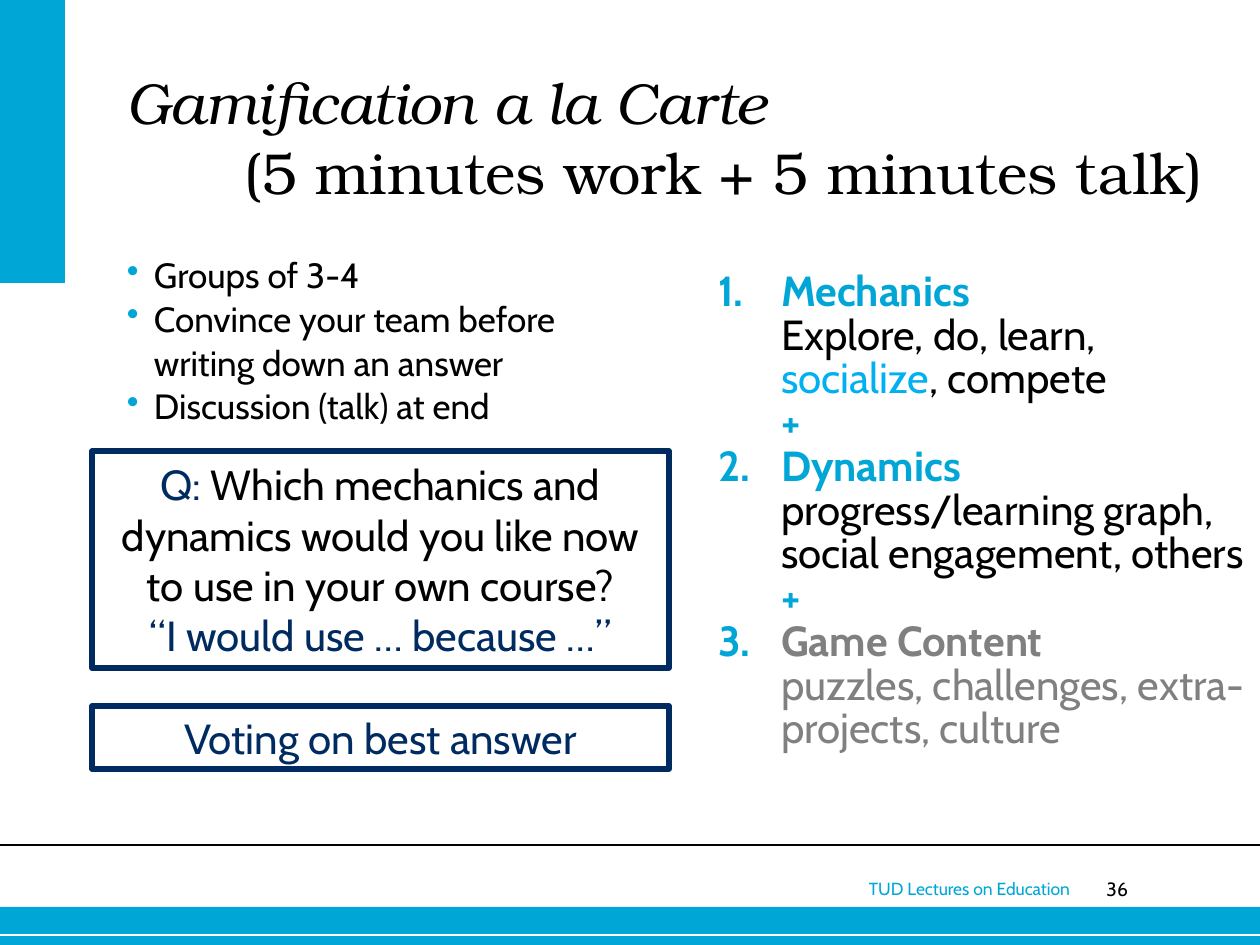
from dataclasses import dataclass

from lxml.etree import SubElement
from pptx import Presentation
from pptx.dml.color import RGBColor
from pptx.enum.shapes import MSO_CONNECTOR, MSO_SHAPE
from pptx.enum.text import MSO_ANCHOR as Anchor, PP_ALIGN as Align
from pptx.oxml.ns import qn
from pptx.util import Emu, Pt


@dataclass(frozen=True)
class Theme:
    cyan: str = "00A6D6"
    sky: str = "00B0F0"
    navy: str = "002B60"
    gray: str = "808080"
    black: str = "000000"
    white: str = "FFFFFF"
    heading: str = "TeX Gyre Bonum"
    body: str = "Cabin"
    title_size: float = 33
    large: float = 24
    medium: float = 20
    number_size: float = 11
    footer_size: float = 10
    leading: float = 25


T = Theme()
PX_PER_INCH = 126
WIDTH, HEIGHT = 1260, 945


def px(n):
    return Emu(round(n * 914400 / PX_PER_INCH))


def rgb(color):
    return RGBColor.from_string(color)


def add_text(p, text, size=T.large, color=T.black, font=T.body, bold=False, italic=False):
    """Append one run; a newline in the text becomes a line break."""
    for i, line in enumerate(text.split("\n")):
        if i:
            p.add_line_break()
        if line:
            r = p.add_run()
            r.text = line
            f = r.font
            f.name, f.size, f.bold, f.italic = font, Pt(size), bold, italic
            f.color.rgb = rgb(color)


def set_indent(p, hang):
    pPr = p._p.get_or_add_pPr()
    pPr.set("marL", str(px(hang)))
    pPr.set("indent", str(-px(hang)))
    return pPr


def add_list_item(tf, index, hang, tag, **marker):
    p = tf.add_paragraph() if index else tf.paragraphs[0]
    pPr = set_indent(p, hang)
    clr = SubElement(pPr, qn("a:buClr"))
    SubElement(clr, qn("a:srgbClr"), val=T.cyan)
    SubElement(pPr, qn(tag), **marker)
    p.line_spacing = Pt(T.leading)
    return p


def set_frame(tf, inset=(0, 0), anchor=Anchor.TOP):
    tf.word_wrap = True
    tf.margin_left = tf.margin_right = px(inset[0])
    tf.margin_top = tf.margin_bottom = px(inset[1])
    tf.vertical_anchor = anchor
    return tf


def text_box(s, x, y, w, h, inset=(0, 0)):
    return set_frame(s.shapes.add_textbox(px(x), px(y), px(w), px(h)).text_frame, inset)


def add_rect(s, x, y, w, h, fill, line=None):
    sp = s.shapes.add_shape(MSO_SHAPE.RECTANGLE, px(x), px(y), px(w), px(h))
    sp.shadow.inherit = False
    sp.fill.solid()
    sp.fill.fore_color.rgb = rgb(fill)
    if line:
        sp.line.color.rgb = rgb(line)
        sp.line.width = Pt(3)
    else:
        sp.line.fill.background()
    return sp


def add_rule(s, y, color, width):
    c = s.shapes.add_connector(MSO_CONNECTOR.STRAIGHT, 0, px(y), px(WIDTH), px(y))
    c.line.color.rgb = rgb(color)
    c.line.width = Pt(width)
    SubElement(c._element.spPr, qn("a:effectLst"))


def add_frame(s):
    add_rect(s, 0, 907, WIDTH, 38, T.cyan)
    add_rule(s, 935, T.white, 0.75)
    add_rule(s, 845, T.black, 1)
    add_rect(s, 0, 0, 65, 283, T.cyan)


def add_footer(s, x, y, footer, number):
    p = text_box(s, x, y, 263, 34, inset=(13, 6)).paragraphs[0]
    add_text(p, footer, size=T.footer_size, color=T.cyan)
    p = text_box(s, x + 210, y + 5, 62, 35).paragraphs[0]
    p.alignment = Align.RIGHT
    add_text(p, number, size=T.number_size)


def add_title(s, x, y, w, h):
    sp = s.shapes.title
    sp.left, sp.top, sp.width, sp.height = px(x), px(y), px(w), px(h)
    p = set_frame(sp.text_frame, anchor=Anchor.MIDDLE).paragraphs[0]
    p.alignment = Align.LEFT
    set_indent(p, 118)
    style = dict(size=T.title_size, font=T.heading)
    add_text(p, "Gamification a la Carte\n", italic=True, **style)
    add_text(p, "(5 minutes work + 5 minutes talk)", **style)


def add_instructions(s, x, y, w, h, items):
    tf = text_box(s, x, y, w, h)
    for i, item in enumerate(items):
        add_text(add_list_item(tf, i, 27, "a:buChar", char="•"), item, size=T.medium)


def add_callout(s, x, y, w, h, parts):
    sp = add_rect(s, x, y, w, h, T.white, T.navy)
    p = set_frame(sp.text_frame, inset=(13, 6), anchor=Anchor.MIDDLE).paragraphs[0]
    p.alignment = Align.CENTER
    for text, color in parts:
        add_text(p, text, color=color)


def add_menu(s, x, y, w, h, courses):
    """Numbered courses: a bold name, then coloured detail, joined by plus signs."""
    tf = text_box(s, x, y, w, h)
    for i, (name, color, details) in enumerate(courses):
        p = add_list_item(tf, i, 63, "a:buAutoNum", type="arabicPeriod")
        add_text(p, name + "\n", color=color, bold=True)
        for text, detail_color in details:
            add_text(p, text, color=detail_color)
        if i < len(courses) - 1:
            add_text(p, "\n+", color=T.cyan, bold=True)


def main():
    prs = Presentation()
    prs.slide_width, prs.slide_height = px(WIDTH), px(HEIGHT)
    s = prs.slides.add_slide(prs.slide_layouts[5])
    add_frame(s)
    add_footer(s, 856, 872, "TUD Lectures on Education", "36")
    add_title(s, 126, 63, 1134, 147)
    add_instructions(s, 127, 252, 530, 190, [
        "Groups of 3-4",
        "Convince your team before writing down an answer",
        "Discussion (talk) at end",
    ])
    add_callout(s, 92, 451, 577, 217, [
        ("Q: ", T.navy),
        ("Which mechanics and dynamics would you like now to use in your own course?\n", T.black),
        ("“I would use … because …”", T.navy),
    ])
    add_menu(s, 718, 271, 538, 621, [
        ("Mechanics", T.cyan, [("Explore, do, learn,\n", T.black), ("socialize", T.sky),
                              (", compete", T.black)]),
        ("Dynamics", T.cyan, [("progress/learning graph,\nsocial engagement, others", T.black)]),
        ("Game Content", T.gray, [("puzzles, challenges, extra-projects, culture", T.gray)]),
    ])
    add_callout(s, 92, 706, 577, 63, [("Voting on best answer", T.navy)])
    prs.save("out.pptx")


if __name__ == "__main__":
    main()
